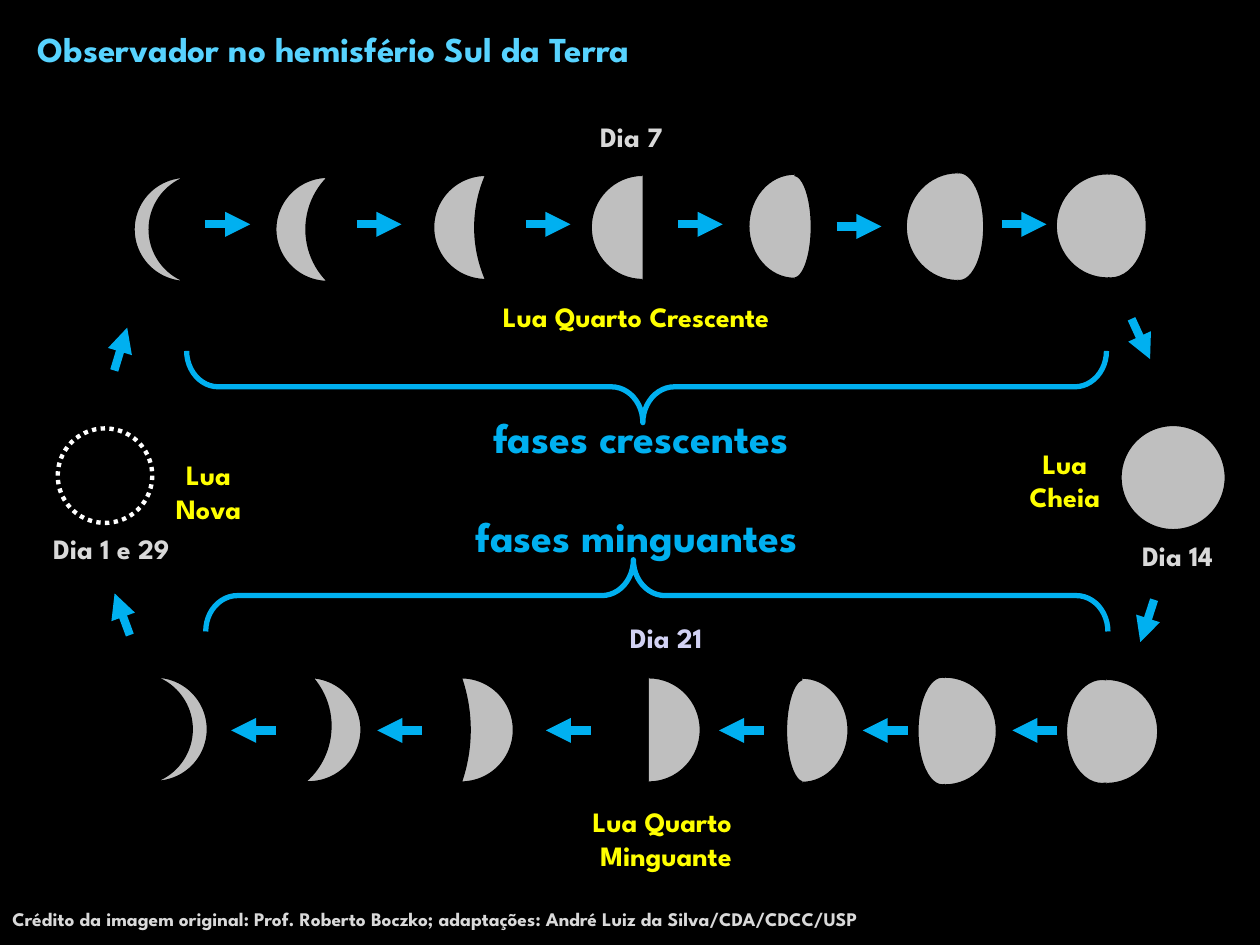
from dataclasses import dataclass

from lxml import etree
from pptx import Presentation
from pptx import util as u
from pptx.dml.color import RGBColor
from pptx.enum import dml, shapes, text
from pptx.oxml import ns

Pt = u.Pt


@dataclass(frozen=True)
class Theme:
    font: str = "League Spartan"
    night: str = "000000"
    moon: str = "BFBFBF"
    white: str = "FFFFFF"
    blue: str = "00B0F0"
    title: str = "57D3FF"
    day: str = "D9D9D9"
    day_21: str = "D2D2F4"
    phase: str = "FFFF00"
    title_size: int = 20
    group_size: int = 24
    label_size: int = 16
    credit_size: int = 11


theme = Theme()
color = RGBColor.from_string
MSO = shapes.MSO_SHAPE

presentation = Presentation()
presentation.slide_width, presentation.slide_height = Pt(720), Pt(540)
slide = presentation.slides.add_slide(presentation.slide_layouts[6])
slide.background.fill.solid()
slide.background.fill.fore_color.rgb = color(theme.night)


def add_text(content, left, top, width, height, size=theme.label_size,
             ink=theme.phase, align=text.PP_ALIGN.CENTER, wrap=True):
    frame = slide.shapes.add_textbox(Pt(left), Pt(top), Pt(width), Pt(height)).text_frame
    frame.word_wrap = wrap
    frame.auto_size = text.MSO_AUTO_SIZE.SHAPE_TO_FIT_TEXT
    for index, line in enumerate(content.split("\n")):
        paragraph = frame.paragraphs[0] if index == 0 else frame.add_paragraph()
        paragraph.alignment = align
        run = paragraph.add_run()
        run.text = line
        run.font.name, run.font.size, run.font.bold = theme.font, Pt(size), True
        run.font.color.rgb = color(ink)


def paint(shape, fill=theme.moon, line=theme.night, width=1):
    shape.shadow.inherit = False
    if fill:
        shape.fill.solid()
        shape.fill.fore_color.rgb = color(fill)
    else:
        shape.fill.background()
    shape.line.color.rgb = color(line)
    shape.line.width = Pt(width)


# New moon (dotted) and full moon
new_moon = slide.shapes.add_shape(MSO.OVAL, Pt(33), Pt(244.8), Pt(54), Pt(54))
paint(new_moon, theme.night, theme.white, 2.5)
new_moon.line.dash_style = dml.MSO_LINE.ROUND_DOT
paint(slide.shapes.add_shape(MSO.OVAL, Pt(640.5), Pt(243), Pt(59.8), Pt(59.8)))

# Crescents: left, top, thickness, rotation
for left, top, thickness, rotation in [
    (76.5, 101.2, 0.296, 0), (157.5, 101.2, 0.583, 0), (247.7, 100.1, 0.792, 0),
    (88.6, 386.8, 0.296, 180), (176.4, 388.1, 0.583, 184), (263.5, 387.2, 0.833, 180),
]:
    crescent = slide.shapes.add_shape(MSO.MOON, Pt(left), Pt(top), Pt(30), Pt(59.8))
    crescent.adjustments[0] = thickness
    crescent.rotation = rotation
    paint(crescent)

# Quarter and gibbous moons: straight edge x, top, half width, height,
# bulging side (-1 left, 1 right), ellipse behind the straight edge
KAPPA = 0.55  # handle length of a quarter-ellipse curve
for edge, top, width, height, side, ellipse in [
    (367.2, 100.1, 29.5, 59.8, -1, None),
    (454, 99.4, 26.2, 59.8, -1, (443.5, 100.1, 20.2, 59)),
    (547.2, 98.6, 29.5, 61.9, -1, (534.2, 98.6, 28.1, 61.9)),
    (632.9, 99.2, 29.5, 59.8, -1, (614.2, 99.2, 41, 59.8)),
    (370.8, 387.2, 29.5, 59.8, 1, None),
    (458.6, 387.4, 26.2, 59.8, 1, (449.3, 388.1, 20.2, 59)),
    (540, 386.8, 29.5, 61.9, 1, (524.4, 386.8, 28.1, 61.9)),
    (632.2, 388.1, 29.5, 59.8, 1, (609.3, 388.1, 41, 59.8)),
]:
    if ellipse:
        paint(slide.shapes.add_shape(MSO.OVAL, *map(Pt, ellipse)))
    outline = [(KAPPA, -1), (1, -KAPPA), (1, 0), (1, KAPPA), (KAPPA, 1), (0, 1)]
    builder = slide.shapes.build_freeform(Pt(edge), Pt(top))
    builder.add_line_segments(
        [(Pt(edge + side * width * x), Pt(top + height * (1 + y) / 2)) for x, y in outline],
        close=False)
    half = builder.convert_to_shape()
    paint(half)
    # Join each three points into one curve
    segments = list(half._element.iter(ns.qn("a:lnTo")))
    for first in (0, 3):
        curve = segments[first]
        curve_path = curve.getparent()
        bezier = etree.SubElement(curve_path, ns.qn("a:cubicBezTo"))
        for segment in segments[first:first + 3]:
            bezier.append(segment[0])
            curve_path.remove(segment)

# Braces over the two groups of phases
for left, top, height, rotation, tip in [
    (349, -41.8, 525.6, 270, 0.496), (354.8, 82.6, 515.5, 90, 0.526),
]:
    brace = slide.shapes.add_shape(MSO.LEFT_BRACE, Pt(left), Pt(top), Pt(41), Pt(height))
    brace.adjustments[0], brace.adjustments[1] = 0.441, tip
    brace.rotation = rotation
    paint(brace, None, theme.blue, 3)

# Arrows around the cycle: start x, start y, end x, end y
LENGTH = 25.6
arrows = [(x, 128.2, x + LENGTH, 128.2) for x in (117.4, 203.8, 300.4, 387.4, 572.4)]
arrows += [(478.1, 129.4, 478.1 + LENGTH, 129.4)]
arrows += [(x, 417.4, x - LENGTH, 417.4) for x in (157.7, 241.2, 337.5, 436.5, 518.6, 604.1)]
arrows += [(65.3, 211.7, 72.7, 187.2), (74.2, 362.9, 65.5, 339.1),
           (646.6, 182.2, 657.2, 205.2), (659.5, 342.7, 651.6, 367)]
for ends in arrows:
    arrow = slide.shapes.add_connector(shapes.MSO_CONNECTOR.STRAIGHT, *map(Pt, ends))
    arrow.line.color.rgb = color(theme.blue)
    arrow.line.width = Pt(4.75)
    etree.SubElement(arrow.line._get_or_add_ln(), ns.qn("a:tailEnd"), type="triangle")
    etree.SubElement(arrow._element.spPr, ns.qn("a:effectLst"))

# Title and credit
LEFT = text.PP_ALIGN.LEFT
add_text("Observador no hemisfério Sul da Terra", 14.4, 12.2, 423.4, 31.7,
         size=theme.title_size, ink=theme.title, align=LEFT)
add_text("Crédito da imagem original: Prof. Roberto Boczko; adaptações: "
         "André Luiz da Silva/CDA/CDCC/USP", 0, 514.8, 632.9, 20.9,
         size=theme.credit_size, ink=theme.day, align=LEFT)

# Day labels
add_text("Dia 1 e 29", 14.4, 300.2, 98.6, 26.6, ink=theme.day)
add_text("Dia 7", 315, 64.8, 91.4, 26.6, ink=theme.day)
add_text("Dia 14", 640.1, 304.2, 65.5, 26.6, ink=theme.day)
add_text("Dia 21", 344.2, 351, 72.7, 26.6, ink=theme.day_21)

# Phase names
add_text("Lua\nNova", 90.7, 258, 56.9, 46.1, wrap=False)
add_text("Lua Quarto Crescente", 275, 167.4, 177.1, 46.1)
add_text("Lua\nCheia", 577.6, 251.5, 61.9, 46.1, wrap=False)
add_text("Lua Quarto \nMinguante", 327.7, 456.5, 105.8, 46.1, wrap=False)

# Group names
add_text("fases crescentes", 241.9, 231.8, 248.4, 36, size=theme.group_size, ink=theme.blue)
add_text("fases minguantes", 220, 288, 287.3, 36, size=theme.group_size, ink=theme.blue)

presentation.save("out.pptx")
